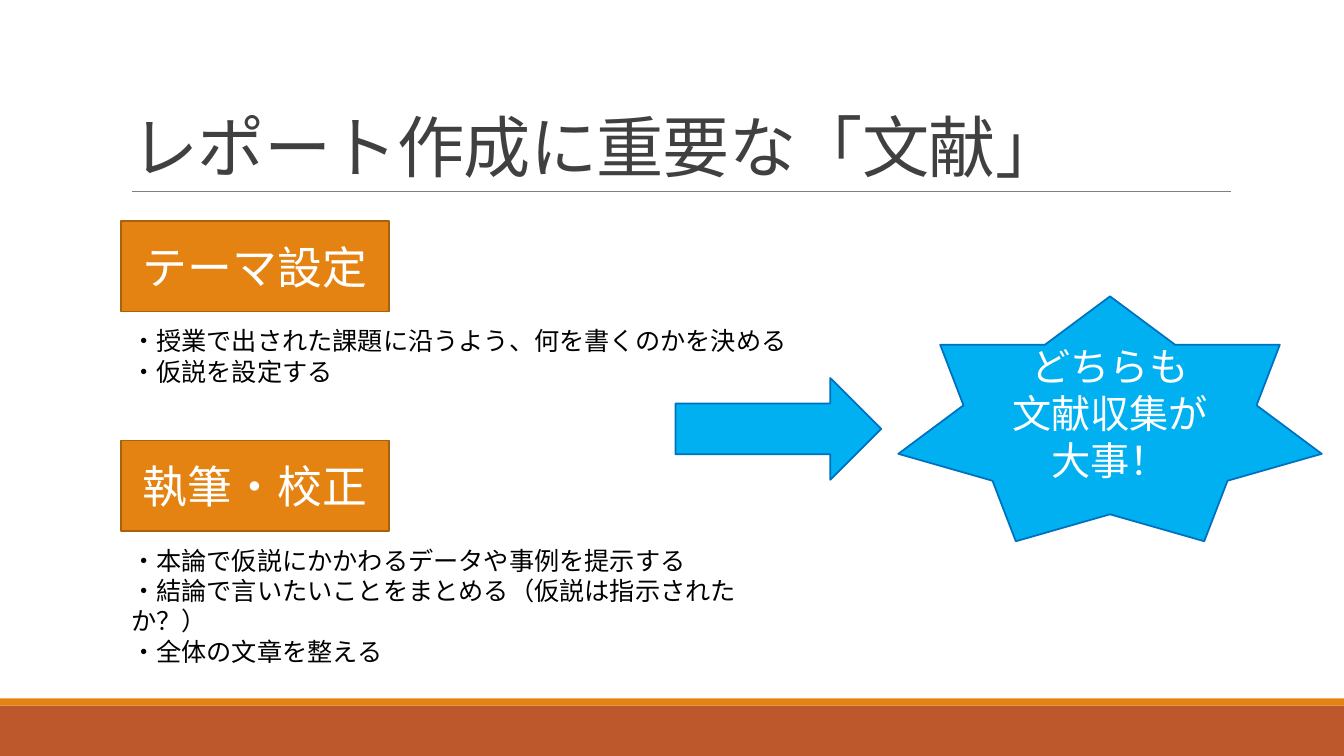
from lxml import etree
from pptx import Presentation
from pptx import util as u
from pptx.dml.color import RGBColor
from pptx.enum import shapes, text
from pptx.oxml.ns import qn

TITLE = "レポート作成に重要な「文献」"
STEPS = [
    {"heading": "テーマ設定", "width": 683, "height": 71,
     "points": ["・授業で出された課題に沿うよう、何を書くのかを決める",
                "・仮説を設定する"]},
    {"heading": "執筆・校正", "width": 635, "height": 101,
     "points": ["・本論で仮説にかかわるデータや事例を提示する",
                "・結論で言いたいことをまとめる（仮説は指示されたか？）",
                "・全体の文章を整える"]},
]
MESSAGE = ["どちらも", "文献収集が", "大事！"]

THEME = {
    "font": "Calibri",
    "colour": {"title": "404040", "text": "000000", "light": "FFFFFF",
               "rule": "808080", "band": "BD582C", "accent": "E48312",
               "accent_edge": "A9610D", "blue": "00B0F0", "blue_edge": "0070C0"},
    "size": {"title": 48, "heading": 32, "body": 18, "message": 28},
}
PX = 9144
WIDTH, HEIGHT = 1333, 750
LEFT, FIRST_TOP, STEP_PITCH = 120, 219, 218
HEADING_W, HEADING_H, BODY_OFFSET = 266, 90, 99


def rgb(name):
    return RGBColor.from_string(THEME["colour"][name])


def set_all(target, values):
    for name, value in values.items():
        setattr(target, name, value)


def place(sp, left, top, width, height):
    set_all(sp, {"left": left * PX, "top": top * PX,
                 "width": width * PX, "height": height * PX})


def write(sp, lines, size, colour, align, anchor, spacing=1.0):
    tf = sp.text_frame
    set_all(tf, {"word_wrap": True, "auto_size": text.MSO_AUTO_SIZE.NONE,
                 "vertical_anchor": anchor})
    for i, line in enumerate(lines):
        p = tf.paragraphs[0] if i == 0 else tf.add_paragraph()
        set_all(p, {"alignment": align, "line_spacing": spacing,
                    "space_before": u.Pt(0), "space_after": u.Pt(0)})
        r = p.add_run()
        r.text = line
        set_all(r.font, {"name": THEME["font"], "size": u.Pt(THEME["size"][size])})
        r.font.color.rgb = rgb(colour)


def add_box(s, kind, box, fill, edge=None):
    sp = s.shapes.add_shape(kind, *(v * PX for v in box))
    sp.shadow.inherit = False
    sp.fill.solid()
    sp.fill.fore_color.rgb = rgb(fill)
    if edge:
        sp.line.color.rgb = rgb(edge)
        sp.line.width = u.Pt(1.25)
    else:
        sp.line.fill.background()
    return sp


def add_frame(s):
    add_box(s, shapes.MSO_SHAPE.RECTANGLE, (0, 700, WIDTH, 50), "band")
    add_box(s, shapes.MSO_SHAPE.RECTANGLE, (0, 693, WIDTH, 7), "accent")
    rule = s.shapes.add_connector(shapes.MSO_CONNECTOR.STRAIGHT,
                                  131 * PX, 190 * PX, 1221 * PX, 190 * PX)
    rule.line.color.rgb = rgb("rule")
    rule.line.width = u.Pt(0.5)
    etree.SubElement(rule._element.spPr, qn("a:effectLst"))


def add_title(s):
    sp = s.shapes.title
    place(sp, LEFT, 31, 1100, 159)
    write(sp, [TITLE], "title", "title", text.PP_ALIGN.LEFT,
          text.MSO_ANCHOR.BOTTOM, 0.85)
    sp.text_frame.paragraphs[0].runs[0].font._element.set("spc", "-50")


def add_step(s, index, step):
    top = FIRST_TOP + index * STEP_PITCH
    heading = add_box(s, shapes.MSO_SHAPE.RECTANGLE,
                      (LEFT, top, HEADING_W, HEADING_H), "accent", "accent_edge")
    write(heading, [step["heading"]], "heading", "light",
          text.PP_ALIGN.CENTER, text.MSO_ANCHOR.MIDDLE)
    body = s.placeholders[index + 1]
    place(body, LEFT, top + BODY_OFFSET, step["width"], step["height"])
    write(body, step["points"], "body", "text",
          text.PP_ALIGN.LEFT, text.MSO_ANCHOR.TOP)
    for p in body.text_frame.paragraphs:
        pPr = p._p.get_or_add_pPr()
        pPr.set("marL", "0")
        pPr.set("indent", "0")
        etree.SubElement(pPr, qn("a:buNone"))


def add_message(s):
    add_box(s, shapes.MSO_SHAPE.RIGHT_ARROW, (670, 375, 204, 101),
            "blue", "blue_edge")
    star = add_box(s, shapes.MSO_SHAPE.STAR_7_POINT, (891, 294, 420, 243),
                   "blue", "blue_edge")
    write(star, MESSAGE, "message", "light",
          text.PP_ALIGN.CENTER, text.MSO_ANCHOR.MIDDLE)


def main():
    prs = Presentation()
    set_all(prs, {"slide_width": WIDTH * PX, "slide_height": HEIGHT * PX})
    s = prs.slides.add_slide(prs.slide_layouts.get_by_name("Two Content"))
    add_frame(s)
    add_title(s)
    for index, step in enumerate(STEPS):
        add_step(s, index, step)
    add_message(s)
    prs.save("out.pptx")


if __name__ == "__main__":
    main()
